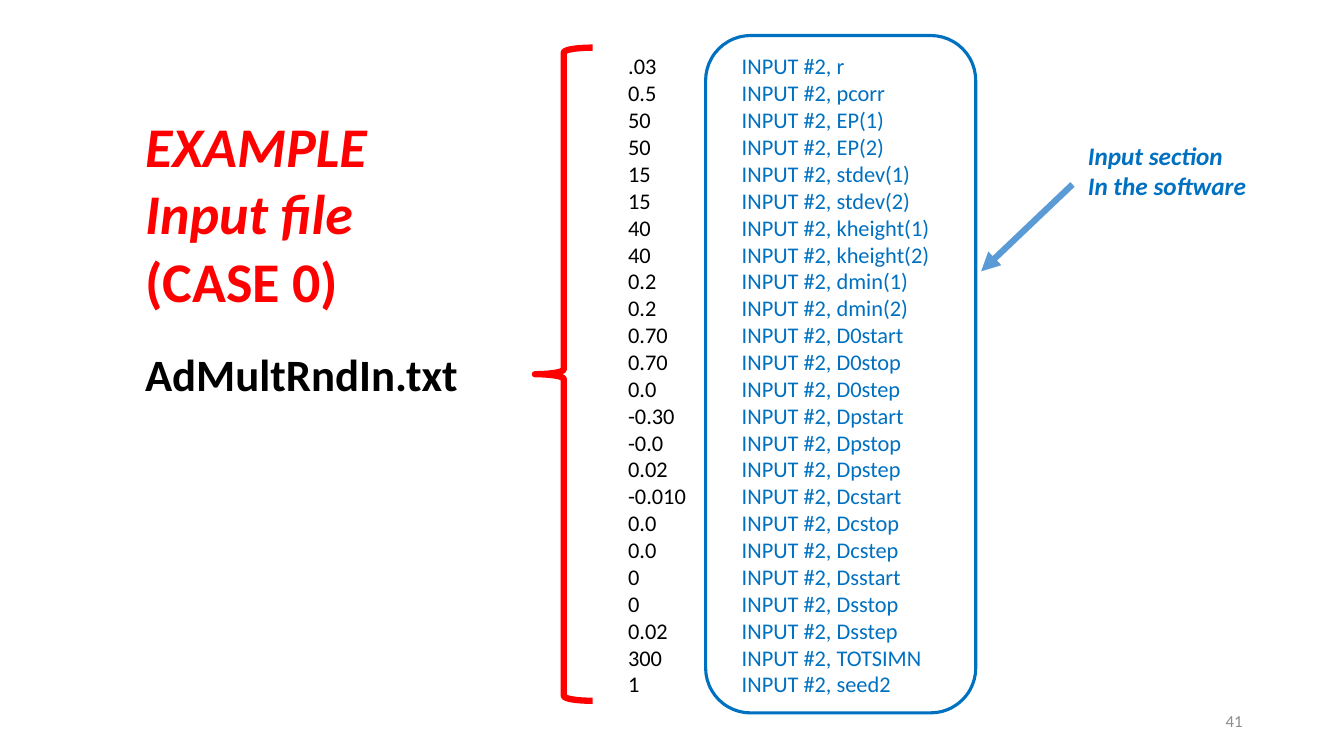
"""Build the slide that pairs an example input file with the statements that read it."""
import dataclasses

import pptx
import pptx.dml.color
import pptx.enum.shapes
import pptx.enum.text
import pptx.oxml.ns
import pptx.util
from lxml import etree

HEADING = [("EXAMPLE", True), ("Input file", True), ("(CASE 0)", False)]
FILE_NAME = "AdMultRndIn.txt"
NOTE = ["Input section", "In the software"]
PAGE_NUMBER = "41"
INPUTS = [
    (".03", "r"), ("0.5", "pcorr"), ("50", "EP(1)"), ("50", "EP(2)"),
    ("15", "stdev(1)"), ("15", "stdev(2)"), ("40", "kheight(1)"), ("40", "kheight(2)"),
    ("0.2", "dmin(1)"), ("0.2", "dmin(2)"),
    ("0.70", "D0start"), ("0.70", "D0stop"), ("0.0", "D0step"),
    ("-0.30", "Dpstart"), ("-0.0", "Dpstop"), ("0.02", "Dpstep"),
    ("-0.010", "Dcstart"), ("0.0", "Dcstop"), ("0.0", "Dcstep"),
    ("0", "Dsstart"), ("0", "Dsstop"), ("0.02", "Dsstep"),
    ("300", "TOTSIMN"), ("1", "seed2"),
]

LIST_TOP, LIST_HEIGHT = 6.3, 87.5
AREAS = {
    "heading": (10.05, 14.1, 25, 28.4),
    "file": (10.05, 45.2, 25, 8.5),
    "values": (46, LIST_TOP, 11.5, LIST_HEIGHT),
    "statements": (54.45, LIST_TOP, 16.1, LIST_HEIGHT),
    "frame": (52.5, 4.7, 20.1, 89.6),
    "brace": (39.8, LIST_TOP, 4.3, 86.4),
    "note": (80.2, 17.9, 13.4, 9.5),
    "number": (70.7, 92.7, 22.5, 5.3),
}
ARROW = (79.8, 24.4, 73, 35.9)


@dataclasses.dataclass(frozen=True)
class Theme:
    font: str = "Calibri"
    red: str = "FF0000"
    blue: str = "0070C0"
    arrow: str = "5B9BD5"
    black: str = "000000"
    gray: str = "8C8C8C"
    heading: int = 40
    file: int = 32
    note: int = 18
    list: int = 16
    number: int = 12
    thin: float = 2.25
    thick: float = 4.5


THEME = Theme()


def color(code):
    return pptx.dml.color.RGBColor.from_string(code)


def scale(deck, shares):
    sides = (deck.slide_width, deck.slide_height) * 2
    return [int(side * share / 100) for side, share in zip(sides, shares)]


def write(box, lines, size, ink, bold=False, align="LEFT", anchor="TOP", wrap=True):
    frame = box.text_frame
    frame.word_wrap = wrap
    frame.auto_size = pptx.enum.text.MSO_AUTO_SIZE.NONE
    frame.vertical_anchor = pptx.enum.text.MSO_ANCHOR[anchor]
    for index, (text, italic) in enumerate(lines):
        para = frame.add_paragraph() if index else frame.paragraphs[0]
        para.alignment = pptx.enum.text.PP_ALIGN[align]
        para.line_spacing = 1.0
        span = para.add_run()
        span.text = text
        span.font.name = THEME.font
        span.font.size = pptx.util.Pt(size)
        span.font.bold = bold
        span.font.italic = italic
        span.font.color.rgb = color(ink)


def add_text(deck, page, area, lines, size, ink, **style):
    box = page.shapes.add_textbox(*scale(deck, AREAS[area]))
    write(box, lines, size, ink, **style)


def add_outline(deck, page, area, kind, ink, width):
    shape = page.shapes.add_shape(
        pptx.enum.shapes.MSO_SHAPE[kind], *scale(deck, AREAS[area]))
    shape.shadow.inherit = False
    shape.fill.background()
    shape.line.color.rgb = color(ink)
    shape.line.width = pptx.util.Pt(width)


def add_arrow(deck, page):
    arrow = page.shapes.add_connector(
        pptx.enum.shapes.MSO_CONNECTOR.STRAIGHT, *scale(deck, ARROW))
    arrow.line.color.rgb = color(THEME.arrow)
    arrow.line.width = pptx.util.Pt(THEME.thick)
    tag = pptx.oxml.ns.qn
    etree.SubElement(arrow.line._get_or_add_ln(), tag("a:tailEnd"), type="triangle")
    etree.SubElement(arrow._element.spPr, tag("a:effectLst"))


def main():
    deck = pptx.Presentation()
    deck.slide_width = pptx.util.Inches(13.33)
    deck.slide_height = pptx.util.Inches(7.5)
    page = deck.slides.add_slide(deck.slide_layouts[5])

    title = page.shapes.title
    title.left, title.top, title.width, title.height = scale(deck, AREAS["heading"])
    write(title, HEADING, THEME.heading, THEME.red, bold=True)

    values = [(value, False) for value, _ in INPUTS]
    statements = [(f"INPUT #2, {name}", False) for _, name in INPUTS]
    note = [(line, True) for line in NOTE]
    add_text(deck, page, "values", values, THEME.list, THEME.black)
    add_text(deck, page, "file", [(FILE_NAME, False)], THEME.file, THEME.black,
             bold=True, wrap=False)
    add_text(deck, page, "number", [(PAGE_NUMBER, False)], THEME.number, THEME.gray,
             align="RIGHT", anchor="MIDDLE")
    add_text(deck, page, "statements", statements, THEME.list, THEME.blue)
    add_outline(deck, page, "frame", "ROUNDED_RECTANGLE", THEME.blue, THEME.thin)
    add_arrow(deck, page)
    add_text(deck, page, "note", note, THEME.note, THEME.blue, bold=True, wrap=False)
    add_outline(deck, page, "brace", "LEFT_BRACE", THEME.red, THEME.thick)
    deck.save("out.pptx")


if __name__ == "__main__":
    main()
